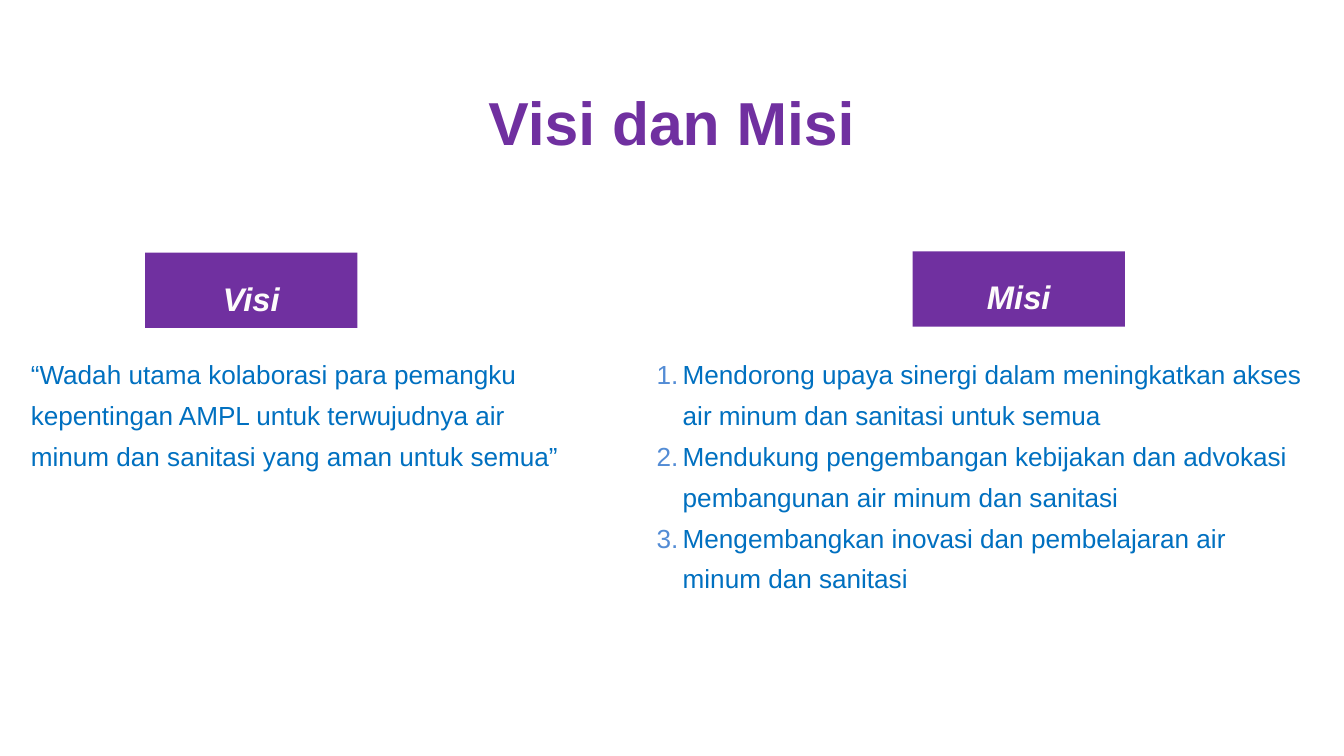
from pptx import Presentation
from pptx.dml.color import RGBColor
from pptx.enum.shapes import MSO_SHAPE
from pptx.enum.text import MSO_ANCHOR, PP_ALIGN
from pptx.oxml.ns import qn
from pptx.util import Pt
from lxml.etree import SubElement

PURPLE, BLUE, NUMBER_BLUE, WHITE = "7030A0", "0070C0", "538CD5", "FDFBFB"


def color(value):
    return RGBColor.from_string(value)


def write(shape, *texts, size, fill, spacing, margin=0, align=PP_ALIGN.LEFT,
          anchor=MSO_ANCHOR.TOP, bold=False, italic=False, numbered=False):
    frame = shape.text_frame
    frame.word_wrap = True
    frame.vertical_anchor = anchor
    frame.margin_left = frame.margin_right = Pt(margin)
    frame.margin_top = frame.margin_bottom = Pt(margin)
    for index, text in enumerate(texts):
        paragraph = frame.paragraphs[0] if index == 0 else frame.add_paragraph()
        paragraph.alignment = align
        paragraph.line_spacing = spacing
        if numbered:
            properties = paragraph._p.get_or_add_pPr()
            properties.set("marL", str(Pt(28)))
            properties.set("indent", str(Pt(-28)))
            bullet_color = SubElement(properties, qn("a:buClr"))
            SubElement(bullet_color, qn("a:srgbClr"), val=NUMBER_BLUE)
            SubElement(properties, qn("a:buFont"), typeface="Arial")
            SubElement(properties, qn("a:buAutoNum"), type="arabicPeriod")
        run = paragraph.add_run()
        run.text = text
        run.font.name = "Arial"
        run.font.size = Pt(size)
        run.font.bold = bold
        run.font.italic = italic
        run.font.color.rgb = color(fill)


presentation = Presentation()
presentation.slide_width = Pt(1440)
presentation.slide_height = Pt(810)
slide = presentation.slides.add_slide(presentation.slide_layouts[6])

# Title
title = slide.shapes.add_textbox(Pt(165), Pt(93.6), Pt(1109.5), Pt(77.8))
write(title, "Visi dan Misi", size=65, fill=PURPLE, spacing=0.99,
      align=PP_ALIGN.CENTER, bold=True)

# Column headings
for heading, left, top in (("Visi", 155.5, 270.7), ("Misi", 977.8, 269.3)):
    shape = slide.shapes.add_shape(MSO_SHAPE.RECTANGLE, Pt(left), Pt(top), Pt(227.5), Pt(80.6))
    shape.shadow.inherit = False
    shape.fill.solid()
    shape.fill.fore_color.rgb = color(PURPLE)
    shape.line.fill.background()
    write(shape, heading, size=35, fill=WHITE, spacing=1.4, margin=7.2,
          align=PP_ALIGN.CENTER, anchor=MSO_ANCHOR.MIDDLE, bold=True, italic=True)

# Vision statement
vision = slide.shapes.add_textbox(Pt(33.1), Pt(374.4), Pt(597.6), Pt(132.5))
write(vision,
      "“Wadah utama kolaborasi para pemangku kepentingan AMPL untuk terwujudnya "
      "air minum dan sanitasi yang aman untuk semua”",
      size=28, fill=BLUE, spacing=1.3)

# Numbered missions
missions = slide.shapes.add_textbox(Pt(703.5), Pt(374.4), Pt(696.2), Pt(265))
write(missions,
      "Mendorong upaya sinergi dalam meningkatkan akses air minum dan sanitasi untuk semua",
      "Mendukung pengembangan kebijakan dan advokasi pembangunan air minum dan sanitasi",
      "Mengembangkan inovasi dan pembelajaran air minum dan sanitasi",
      size=28, fill=BLUE, spacing=1.3, numbered=True)

presentation.save("out.pptx")
